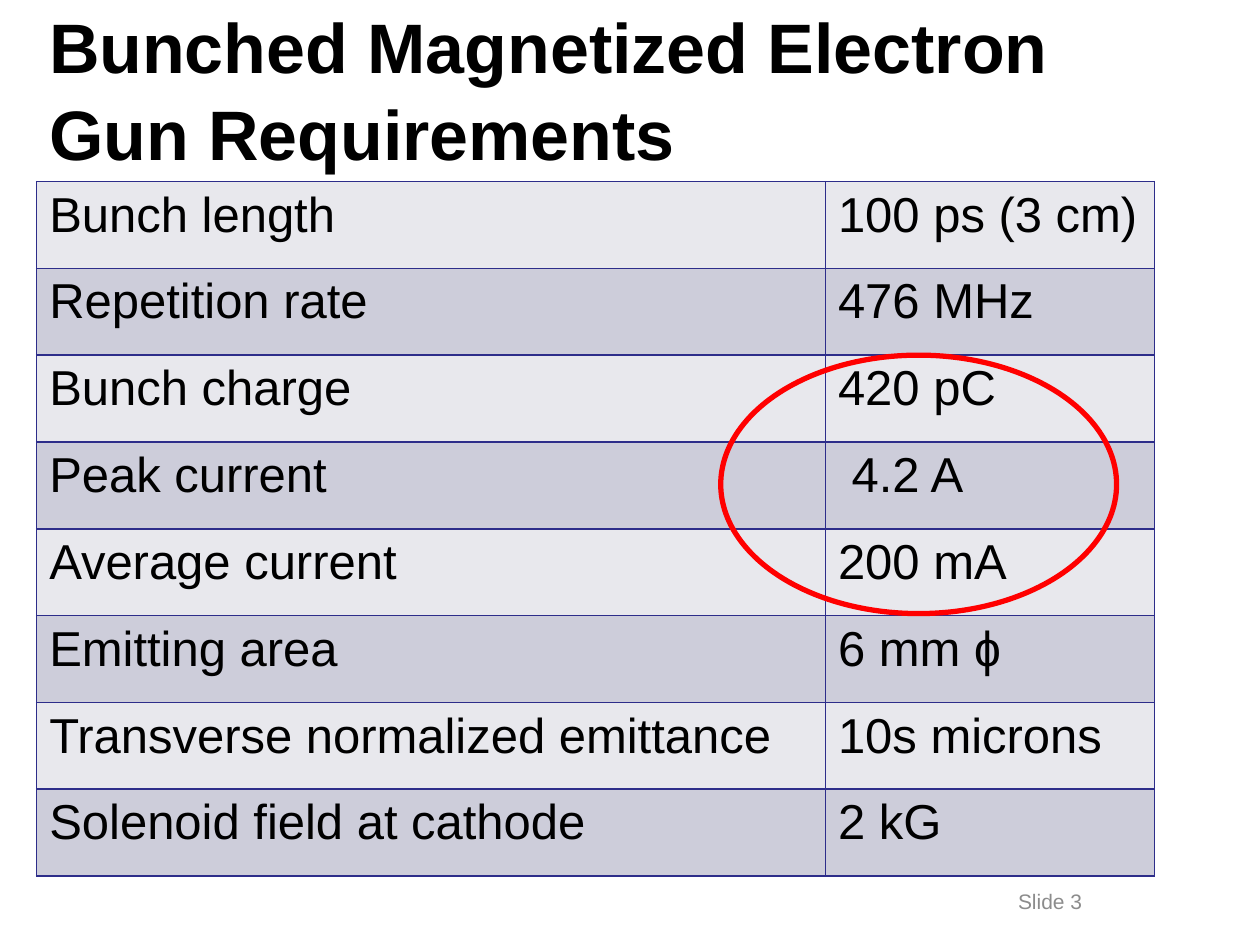
from lxml import etree
from pptx import Presentation
from pptx import util as u
from pptx.dml.color import RGBColor
from pptx.enum import shapes, text
from pptx.oxml import ns

BLACK = RGBColor(0x00, 0x00, 0x00)
GREY = RGBColor(0x8C, 0x8C, 0x8C)
RED = RGBColor(0xFF, 0x00, 0x00)
NAVY = RGBColor(0x2D, 0x2D, 0x8A)
ROW_FILLS = [RGBColor(0xE8, 0xE8, 0xED), RGBColor(0xCD, 0xCD, 0xDA)]

REQUIREMENTS = [
    ("Bunch length", "100 ps (3 cm)"),
    ("Repetition rate", "476 MHz"),
    ("Bunch charge", "420 pC"),
    ("Peak current", " 4.2 A"),
    ("Average current", "200 mA"),
    ("Emitting area", "6 mm ɸ"),
    ("Transverse normalized emittance", "10s microns"),
    ("Solenoid field at cathode", "2 kG"),
]


def write_text(frame, words, size, color=BLACK, bold=False,
               align=text.PP_ALIGN.LEFT, anchor=text.MSO_ANCHOR.TOP, spacing=None):
    frame.word_wrap = True
    frame.vertical_anchor = anchor
    paragraph = frame.paragraphs[0]
    paragraph.alignment = align
    paragraph.line_spacing = spacing
    run = paragraph.add_run()
    run.text = words
    run.font.name = "Arial"
    run.font.size = u.Pt(size)
    run.font.bold = bold
    run.font.color.rgb = color


def add_borders(cell):
    """Draw a 1 pt navy line on all four sides; call before the cell is filled."""
    properties = cell._tc.get_or_add_tcPr()
    for side in ("lnL", "lnR", "lnT", "lnB"):
        line = etree.SubElement(properties, ns.qn(f"a:{side}"), w=str(u.Pt(1)))
        fill = etree.SubElement(line, ns.qn("a:solidFill"))
        etree.SubElement(fill, ns.qn("a:srgbClr"), val=str(NAVY))


presentation = Presentation()
presentation.slide_width = u.Cm(25.4)
presentation.slide_height = u.Cm(19.05)
slide = presentation.slides.add_slide(presentation.slide_layouts[6])

title = slide.shapes.add_textbox(u.Cm(0.74), u.Cm(0.03), u.Cm(23.09), u.Cm(3.45))
write_text(title.text_frame, "Bunched Magnetized Electron Gun Requirements", 40,
           bold=True, anchor=text.MSO_ANCHOR.MIDDLE, spacing=1.04)

table = slide.shapes.add_table(len(REQUIREMENTS), 2, u.Cm(0.74), u.Cm(3.66),
                               u.Cm(22.53), u.Cm(14)).table
for column, width in zip(table.columns, (15.9, 6.63)):
    column.width = u.Cm(width)
for row_index, requirement in enumerate(REQUIREMENTS):
    table.rows[row_index].height = u.Cm(1.75)
    for column_index, words in enumerate(requirement):
        cell = table.cell(row_index, column_index)
        add_borders(cell)
        cell.fill.solid()
        cell.fill.fore_color.rgb = ROW_FILLS[row_index % 2]
        write_text(cell.text_frame, words, 28)

slide_number = slide.shapes.add_textbox(u.Cm(18.21), u.Cm(17.65), u.Cm(5.92), u.Cm(1.02))
write_text(slide_number.text_frame, "Slide 3", 12, color=GREY,
           align=text.PP_ALIGN.CENTER, anchor=text.MSO_ANCHOR.MIDDLE)

highlight = slide.shapes.add_shape(shapes.MSO_SHAPE.OVAL, u.Cm(14.53), u.Cm(7.16),
                                   u.Cm(7.98), u.Cm(5.21))
highlight.shadow.inherit = False
highlight.fill.background()
highlight.line.color.rgb = RED
highlight.line.width = u.Pt(3)

presentation.save("out.pptx")
